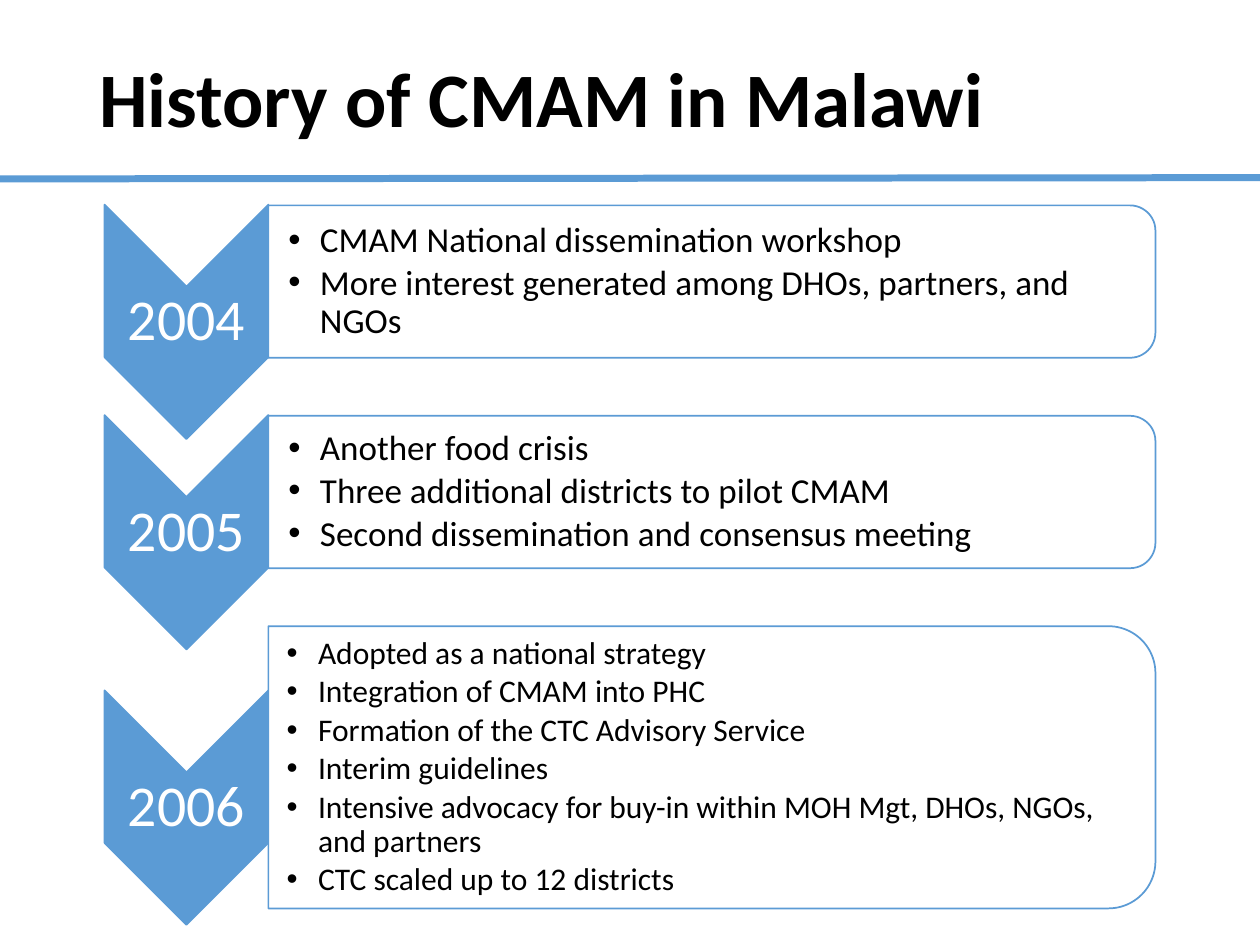
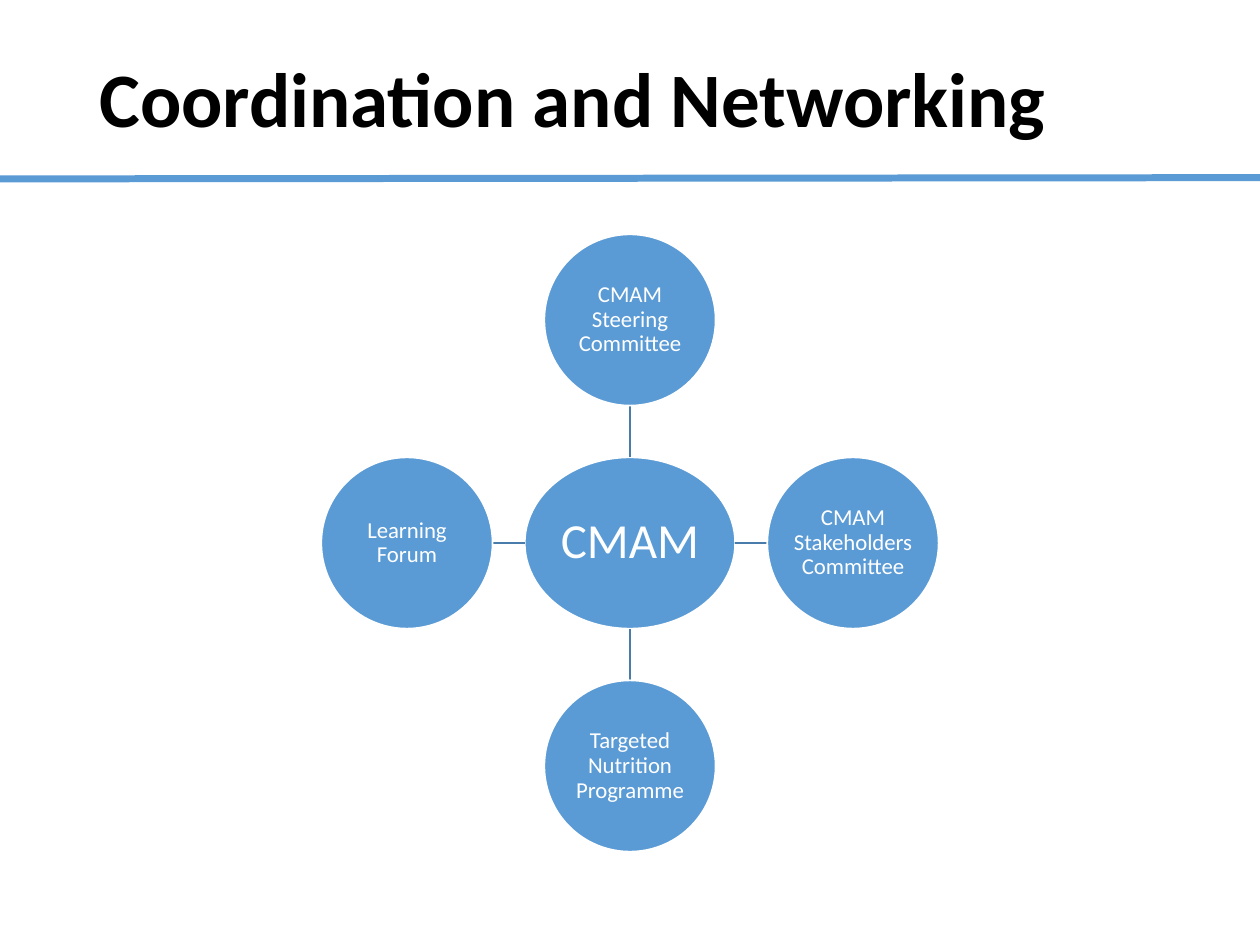
from lxml.etree import SubElement
from pptx import Presentation
from pptx.dml.color import RGBColor
from pptx.enum.shapes import MSO_CONNECTOR as Connector, MSO_SHAPE as Shape
from pptx.enum.text import MSO_ANCHOR as Anchor, PP_ALIGN as Align
from pptx.oxml.ns import qn
from pptx.util import Inches, Pt

COLORS = {"blue": "5B9BD5", "link": "497CAB", "white": "FFFFFF", "black": "000000"}
FONT = "Calibri"

MILESTONES = [
    ("2004", 1.21, 20, [
        "CMAM National dissemination workshop",
        "More interest generated among DHOs, partners, and NGOs",
    ]),
    ("2005", 1.21, 20, [
        "Another food crisis",
        "Three additional districts to pilot CMAM",
        "Second dissemination and consensus meeting",
    ]),
    ("2006", 2.24, 18, [
        "Adopted as a national strategy",
        "Integration of CMAM into PHC",
        "Formation of the CTC Advisory Service",
        "Interim guidelines",
        "Intensive advocacy for buy-in within MOH Mgt, DHOs, NGOs, and partners",
        "CTC scaled up to 12 districts",
    ]),
]

FORUMS = [
    ("CMAM Steering Committee", 0, -1),
    ("CMAM Stakeholders Committee", 1, 0),
    ("Targeted Nutrition Programme", 0, 1),
    ("Learning Forum", -1, 0),
]


def color(name):
    return RGBColor.from_string(COLORS[name])


def write(shape, lines, size, ink="white", bold=False, align=Align.CENTER,
          margins=(0.02, 0.02, 0.02, 0.02), bullet=False):
    frame = shape.text_frame
    frame.word_wrap = True
    frame.vertical_anchor = Anchor.MIDDLE
    frame.margin_left, frame.margin_top, frame.margin_right, frame.margin_bottom = map(Inches, margins)
    for index, line in enumerate(lines):
        para = frame.add_paragraph() if index else frame.paragraphs[0]
        para.alignment = align
        para.line_spacing = 0.9
        span = para.add_run()
        span.text = line
        span.font.name = FONT
        span.font.size = Pt(size)
        span.font.bold = bold
        span.font.color.rgb = color(ink)
        if bullet:
            para.space_after = Pt(size * 0.14)
            props = para._p.get_or_add_pPr()
            props.set("marL", str(Inches(0.25)))
            props.set("indent", str(Inches(-0.25)))
            SubElement(props, qn("a:buFont"), typeface="Arial")
            SubElement(props, qn("a:buChar"), char="•")


def add_text(page, left, top, width, height, lines, size, **style):
    box = page.shapes.add_textbox(*map(Inches, (left, top, width, height)))
    write(box, lines, size, **style)


def add_form(page, kind, center_x, center_y, width, height, fill, line, rotation=0):
    form = page.shapes.add_shape(
        kind, *map(Inches, (center_x - width / 2, center_y - height / 2, width, height)))
    form.rotation = rotation
    form.shadow.inherit = False
    form.fill.solid()
    form.fill.fore_color.rgb = color(fill)
    form.line.color.rgb = color(line)
    form.line.width = Pt(1)
    return form


def add_line(page, start, end, ink, width):
    line = page.shapes.add_connector(Connector.STRAIGHT, *map(Inches, (*start, *end)))
    line.line.color.rgb = color(ink)
    line.line.width = Pt(width)
    SubElement(line._element.spPr, qn("a:effectLst"))


def add_page(deck, title):
    page = deck.slides.add_slide(deck.slide_layouts[6])
    add_line(page, (0, 1.42), (10, 1.41), "blue", 4)
    add_text(page, 0.69, 0.4, 8.62, 0.83, [title], 44, ink="black", bold=True,
             align=Align.LEFT, margins=(0.1, 0.05, 0.1, 0.05))
    return page


def add_milestone(page, left, top, width, height, year, size, points):
    arrow_width, arrow_height, label_height = 1.3, 1.86, 0.56
    middle = top + height / 2
    arrow_middle = middle + 0.32
    add_form(page, Shape.CHEVRON, left + arrow_width / 2, arrow_middle,
             arrow_height, arrow_width, "blue", "blue", rotation=90)
    add_text(page, left, arrow_middle - label_height / 2, arrow_width, label_height, [year], 33)

    panel_left = left + arrow_width
    panel_width = width - arrow_width
    add_form(page, Shape.ROUND_2_SAME_RECTANGLE, panel_left + panel_width / 2, middle,
             height, panel_width, "white", "blue", rotation=90)
    inset = height * 0.05
    add_text(page, panel_left, top + inset, panel_width - inset, height - 2 * inset,
             points, size, ink="black", align=Align.LEFT, bullet=True,
             margins=(size * 0.008, 0.01, 0.01, 0.01))


def add_timeline(page, left, top, width, pitch):
    for row, (year, height, size, points) in enumerate(MILESTONES):
        add_milestone(page, left, top + row * pitch, width, height, year, size, points)


def add_network(page, center_x, center_y, reach):
    hub_width, diameter = 1.67, 1.36
    hub = add_form(page, Shape.OVAL, center_x, center_y, hub_width, diameter, "blue", "white")
    write(hub, ["CMAM"], 28)
    rim = reach - diameter / 2
    for name, across, down in FORUMS:
        start = (center_x + across * hub_width / 2, center_y + down * diameter / 2)
        end = (center_x + across * rim, center_y + down * rim)
        add_line(page, start, end, "link", 1)
        forum = add_form(page, Shape.OVAL, center_x + across * reach, center_y + down * reach,
                         diameter, diameter, "blue", "white")
        write(forum, [name], 13, margins=(0.01, 0.01, 0.01, 0.01))


def main():
    deck = Presentation()
    deck.slide_width, deck.slide_height = Inches(10), Inches(7.5)
    add_timeline(add_page(deck, "History of CMAM in Malawi"), 0.83, 1.63, 8.34, 1.67)
    add_network(add_page(deck, "Coordination and Networking"), 5, 4.31, 1.77)
    deck.save("out.pptx")


if __name__ == "__main__":
    main()
